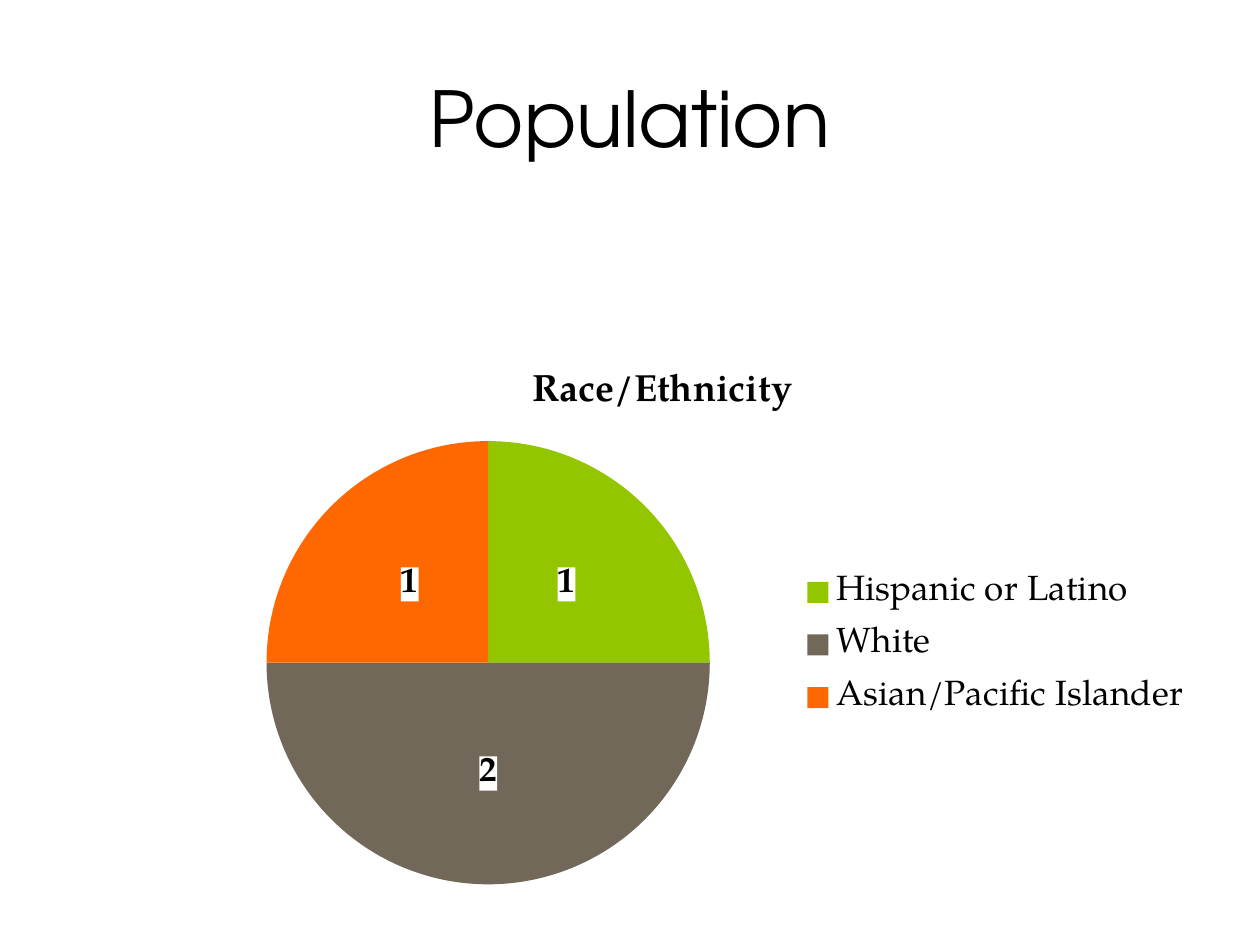
"""Build the population slide with its race and ethnicity pie chart."""
from lxml.etree import SubElement
from pptx import Presentation
from pptx.chart.data import CategoryChartData
from pptx.dml.color import RGBColor
from pptx.enum.chart import XL_CHART_TYPE, XL_LABEL_POSITION, XL_LEGEND_POSITION
from pptx.enum.text import MSO_ANCHOR, PP_ALIGN
from pptx.oxml import parse_xml
from pptx.oxml.ns import nsdecls, qn
from pptx.util import Inches, Pt

TITLE = "Population"
CHART_TITLE = "Race/Ethnicity"
SLICES = [
    ("Hispanic or Latino", 1, "94C600"),
    ("White", 2, "71685A"),
    ("Asian/Pacific Islander", 1, "FF6700"),
]
HEAD_FONT, BODY_FONT = "TeX Gyre Adventor", "TeX Gyre Pagella"
TITLE_BOX = (0.5, 0.3, 9, 1.25)
CHART_BOX = (1.33, 2.75, 8.33, 4.42)
CHART_TITLE_AT = (4.17, 2.88)
PIE_BOX = (2.11, 3.5, 3.52, 3.52)
LEGEND_BOX = (6.3, 4.43, 3.2, 1.38)


def rgb(value):
    return RGBColor.from_string(value)


def style(font, size, name=BODY_FONT, bold=False):
    font.name, font.size, font.bold = name, Pt(size), bold
    font.color.rgb = rgb("000000")


def place(element, index, box, inner=False):
    for old in element.findall(qn("c:layout")):
        element.remove(old)
    layout = parse_xml(f"<c:layout {nsdecls('c')}/>")
    manual = SubElement(layout, qn("c:manualLayout"))
    if inner:
        SubElement(manual, qn("c:layoutTarget")).set("val", "inner")
    for mode in ("xMode", "yMode"):
        SubElement(manual, qn(f"c:{mode}")).set("val", "edge")
    left, top, width, height = CHART_BOX
    for key, length, start, full in zip("xywh", box, (left, top, 0, 0), (width, height) * 2):
        SubElement(manual, qn(f"c:{key}")).set("val", f"{(length - start) / full:.3f}")
    element.insert(index, layout)


def add_title(s):
    tf = s.shapes.add_textbox(*map(Inches, TITLE_BOX)).text_frame
    tf.word_wrap = True
    tf.vertical_anchor = MSO_ANCHOR.MIDDLE
    tf.text = TITLE
    p = tf.paragraphs[0]
    p.alignment = PP_ALIGN.CENTER
    style(p.runs[0].font, 44, HEAD_FONT)


def add_pie(s):
    names, values, colors = zip(*SLICES)
    data = CategoryChartData()
    data.categories = names
    data.add_series(CHART_TITLE, values)
    chart = s.shapes.add_chart(XL_CHART_TYPE.PIE, *map(Inches, CHART_BOX), data).chart
    style(chart.font, 18)

    chart.has_title = True
    tf = chart.chart_title.text_frame
    tf.text = CHART_TITLE
    style(tf.paragraphs[0].runs[0].font, 21.6, bold=True)

    chart.has_legend = True
    chart.legend.position = XL_LEGEND_POSITION.RIGHT
    chart.legend.include_in_layout = False
    style(chart.legend.font, 20)

    plot = chart.plots[0]
    plot.vary_by_categories = True
    series = plot.series[0]
    for i, color in enumerate(colors):
        fill = series.points[i].format.fill
        fill.solid()
        fill.fore_color.rgb = rgb(color)

    labels = series.data_labels
    labels.show_value = True
    labels.position = XL_LABEL_POSITION.CENTER
    style(labels.font, 20, bold=True)
    text = chart.element.xpath(".//c:ser/c:dLbls/c:txPr")[0]
    text.addprevious(parse_xml(
        f"<c:spPr {nsdecls('c', 'a')}><a:solidFill>"
        '<a:srgbClr val="FFFFFF"/></a:solidFill></c:spPr>'))

    for tag, index, box in (("title", 1, CHART_TITLE_AT),
                            ("plotArea", 0, PIE_BOX),
                            ("legend", 1, LEGEND_BOX)):
        place(chart.element.xpath(f"c:chart/c:{tag}")[0], index, box, tag == "plotArea")


def main():
    prs = Presentation()
    prs.slide_width, prs.slide_height = Inches(10), Inches(7.5)
    s = prs.slides.add_slide(prs.slide_layouts[6])
    add_title(s)
    add_pie(s)
    prs.save("out.pptx")


if __name__ == "__main__":
    main()
